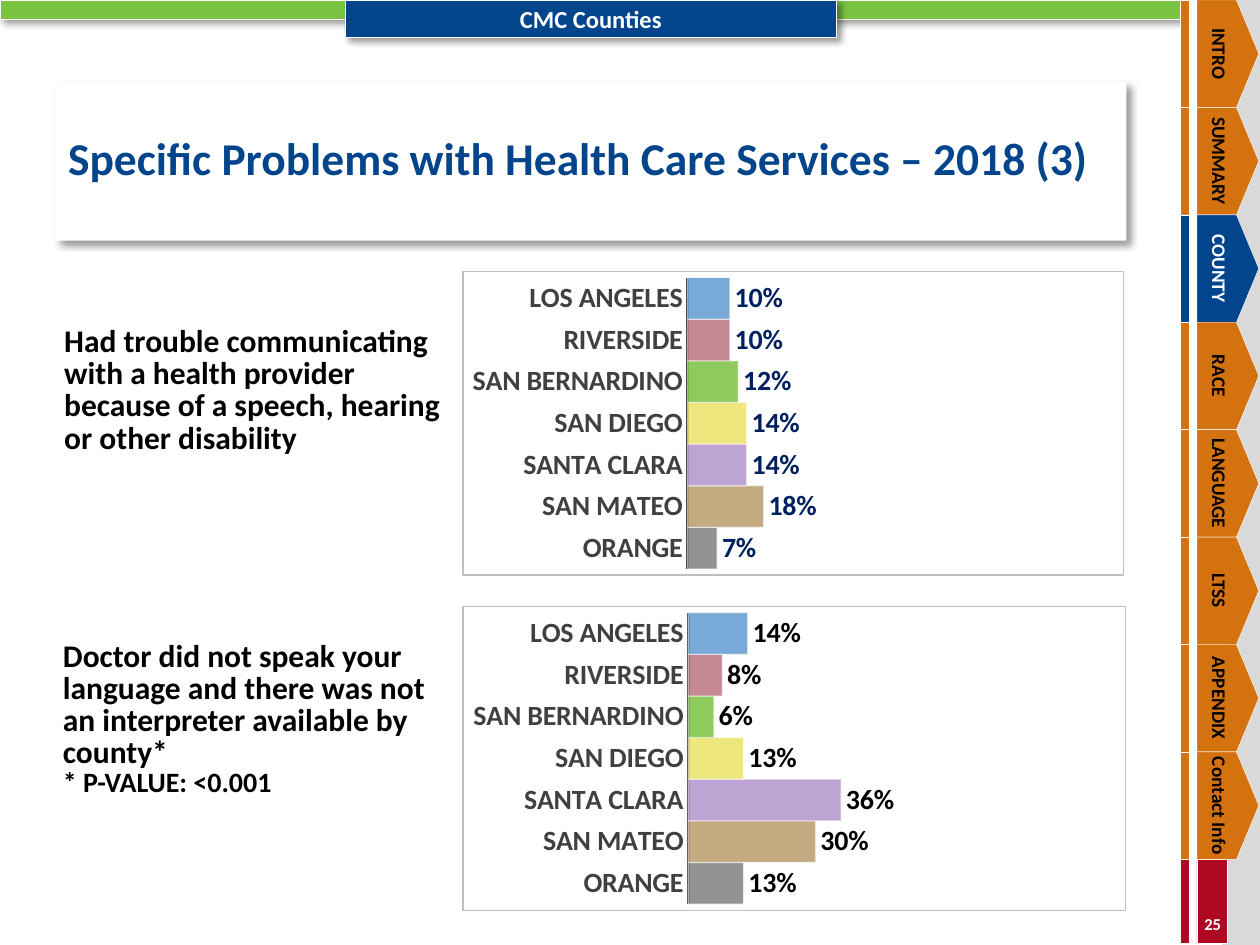
from lxml.etree import SubElement
from pptx import Presentation
from pptx.chart.data import CategoryChartData
from pptx.dml.color import RGBColor
from pptx.enum.chart import XL_CHART_TYPE, XL_LABEL_POSITION, XL_TICK_MARK
from pptx.enum.shapes import MSO_SHAPE
from pptx.enum.text import MSO_ANCHOR, PP_ALIGN
from pptx.oxml import parse_xml
from pptx.oxml.ns import nsdecls, qn
from pptx.util import Inches, Pt

FONT = "Calibri"
COLORS = {
    "white": "FFFFFF", "black": "000000", "blue": "02458C", "navy": "002060",
    "green": "7BC342", "orange": "D4720F", "red": "AE0823", "rail": "D9D9D9",
    "axis": "404040", "border": "BFBFBF",
}
TITLE = "Specific Problems with Health Care Services – 2018 (3)"
TABS = ["INTRO", "SUMMARY", "COUNTY", "RACE", "LANGUAGE", "LTSS", "APPENDIX", "Contact Info"]
CURRENT_TAB = "COUNTY"
TAB_HEIGHT = 6.82 / len(TABS)
CAPTIONS = [  # box, then (text, size) per paragraph
    ((0.51, 2.88, 2.99, 0.45),
     [("Had trouble communicating with a health provider because of a speech, "
       "hearing or other disability", 18)]),
    ((0.5, 5.45, 3, 0.53),
     [("Doctor did not speak your language and there was not an interpreter "
       "available by county*", 18),
      ("* P-VALUE: <0.001", 16)]),
]
COUNTIES = [  # listed bottom to top: name, bar colour
    ("ORANGE", "808080"), ("SAN MATEO", "BA9C6C"), ("SANTA CLARA", "B395CB"),
    ("SAN DIEGO", "ECE368"), ("SAN BERNARDINO", "7BC342"),
    ("RIVERSIDE", "BC7583"), ("LOS ANGELES", "629CD0"),
]
CHARTS = [  # box, values, label colour
    ((3.67, 2.15, 5.25, 2.42), [0.07, 0.18, 0.14, 0.14, 0.12, 0.10, 0.10], "navy"),
    ((3.67, 4.81, 5.27, 2.42), [0.13, 0.30, 0.36, 0.13, 0.06, 0.08, 0.14], "black"),
]
PLOT_AREA = {"x": 0.34, "y": 0.02, "w": 0.64, "h": 0.96}


def rgb(name):
    return RGBColor.from_string(COLORS.get(name, name))


def inches(box):
    return [Inches(length) for length in box]


def style_font(font, size, color):
    font.name, font.size, font.bold = FONT, Pt(size), True
    font.color.rgb = rgb(color)


def add_shadow(shape):
    shape._element.spPr.append(parse_xml(
        f'<a:effectLst {nsdecls("a")}><a:outerShdw blurRad="{Pt(4)}" dist="{Pt(3)}" '
        'dir="2700000" algn="tl" rotWithShape="0"><a:srgbClr val="000000">'
        '<a:alpha val="40000"/></a:srgbClr></a:outerShdw></a:effectLst>'))


def add_block(shapes, box, fill, line_width=0.25, kind=MSO_SHAPE.RECTANGLE, shadow=False):
    shape = shapes.add_shape(kind, *inches(box))
    shape.fill.solid()
    shape.fill.fore_color.rgb = rgb(fill)
    if line_width:
        shape.line.color.rgb = rgb("white")
        shape.line.width = Pt(line_width)
    else:
        shape.line.fill.background()
    if shadow:
        add_shadow(shape)
    else:
        shape.shadow.inherit = False
    return shape


def write(shape, lines, color, align=PP_ALIGN.LEFT, anchor=MSO_ANCHOR.MIDDLE, spacing=0.85):
    """Fill a shape with (text, size) paragraphs in one colour."""
    frame = shape.text_frame
    frame.word_wrap = True
    frame.vertical_anchor = anchor
    frame.text = "\n".join(text for text, _ in lines)
    for paragraph, (_, size) in zip(frame.paragraphs, lines):
        paragraph.alignment = align
        paragraph.line_spacing = spacing
        style_font(paragraph.runs[0].font, size, color)


def add_text(shapes, box, lines, color, **options):
    text_box = shapes.add_textbox(*inches(box))
    frame = text_box.text_frame
    frame.margin_left = frame.margin_right = frame.margin_top = frame.margin_bottom = 0
    write(text_box, lines, color, **options)
    return text_box


def set_alpha(color_format_parent, percent):
    for color in color_format_parent.iter(qn("a:srgbClr")):
        SubElement(color, qn("a:alpha")).set("val", str(percent * 1000))


def add_navigation(shapes):
    add_block(shapes, (9.7, 0, 0.3, 7.5), "rail", line_width=0)
    for left, width in ((9.5, 0.24), (9.37, 0.07)):
        add_block(shapes, (left, 6.82, width, 0.67), "red")
    add_text(shapes, (9.5, 7.25, 0.25, 0.16), [("25", 9.5)], "white",
             align=PP_ALIGN.CENTER, spacing=1)
    add_block(shapes, (0, 0, 9.37, 0.15), "green", shadow=True)
    for index, name in enumerate(TABS):
        top = index * TAB_HEIGHT
        current = name == CURRENT_TAB
        fill = "blue" if current else "orange"
        add_block(shapes, (9.37, top, 0.07, TAB_HEIGHT), fill)
        arrow = add_block(shapes, (9.5, top, 0.49, TAB_HEIGHT), fill, kind=MSO_SHAPE.PENTAGON)
        arrow.adjustments[0] = 0.36
        label = add_text(shapes, (9.59, top, 0.4, TAB_HEIGHT), [(name, 11)],
                         "white" if current else "black",
                         align=PP_ALIGN.CENTER, anchor=MSO_ANCHOR.BOTTOM)
        label.text_frame._txBody.bodyPr.set("vert", "vert")
    banner = add_block(shapes, (2.74, 0, 3.9, 0.3), "blue", line_width=0.75, shadow=True)
    write(banner, [("CMC Counties", 14)], "white", align=PP_ALIGN.CENTER, spacing=1)


def frame_chart(chart):
    """Outline the chart and fix the inner plot area."""
    chart._chartSpace.find(qn("c:chart")).addnext(parse_xml(
        f'<c:spPr {nsdecls("c", "a")}><a:noFill/><a:ln w="{Pt(0.75)}"><a:solidFill>'
        f'<a:srgbClr val="{COLORS["border"]}"/></a:solidFill></a:ln></c:spPr>'))
    plot_area = chart._chartSpace.find(".//" + qn("c:plotArea"))
    for old_layout in plot_area.findall(qn("c:layout")):
        plot_area.remove(old_layout)
    sides = "".join(f'<c:{side} val="{share}"/>' for side, share in PLOT_AREA.items())
    plot_area.insert(0, parse_xml(
        f'<c:layout {nsdecls("c")}><c:manualLayout><c:layoutTarget val="inner"/>'
        f'<c:xMode val="edge"/><c:yMode val="edge"/>{sides}</c:manualLayout></c:layout>'))


def add_county_chart(shapes, box, values, label_color):
    data = CategoryChartData(number_format="0%")
    data.categories = [name for name, _ in COUNTIES]
    data.add_series("Series 1", values)
    chart = shapes.add_chart(XL_CHART_TYPE.BAR_CLUSTERED, *inches(box), data).chart
    chart.has_legend = chart.has_title = False
    chart.font.name, chart.font.size = FONT, Pt(16)

    value_axis = chart.value_axis
    value_axis.minimum_scale, value_axis.maximum_scale = 0, 1
    value_axis.has_major_gridlines = value_axis.visible = False
    category_axis = chart.category_axis
    category_axis.major_tick_mark = XL_TICK_MARK.NONE
    category_axis.format.line.color.rgb = rgb("axis")
    category_axis.format.line.width = Pt(1.5)
    style_font(category_axis.tick_labels.font, 16, "axis")

    plot = chart.plots[0]
    plot.gap_width, plot.overlap = 0, 91
    plot.vary_by_categories = False
    series = plot.series[0]
    for index, (_, color) in enumerate(COUNTIES):
        point = series.points[index].format
        point.fill.solid()
        point.fill.fore_color.rgb = rgb(color)
        point.line.color.rgb = rgb("white")
        point.line.width = Pt(0.75)
    for properties in series._element.iter(qn("c:spPr")):
        set_alpha(properties.find(qn("a:solidFill")), 85)
        set_alpha(properties.find(qn("a:ln")), 50)

    labels = series.data_labels
    labels.show_value = True
    labels.position = XL_LABEL_POSITION.OUTSIDE_END
    labels.number_format, labels.number_format_is_linked = "0%", False
    style_font(labels.font, 16, label_color)
    frame_chart(chart)


def add_title(slide):
    title = slide.shapes.title
    title.left, title.top, title.width, title.height = inches((0.44, 0.65, 8.5, 1.26))
    title.fill.solid()
    title.fill.fore_color.rgb = rgb("white")
    add_shadow(title)
    write(title, [(TITLE, 26)], "blue")
    properties = title.text_frame.paragraphs[0]._p.get_or_add_pPr()
    properties.set("marL", str(Inches(0.51)))
    properties.set("indent", str(-Inches(0.51)))


def main():
    presentation = Presentation()
    presentation.slide_width, presentation.slide_height = Inches(10), Inches(7.5)
    slide = presentation.slides.add_slide(presentation.slide_layouts[5])
    add_navigation(slide.shapes)
    add_title(slide)
    for box, lines in CAPTIONS:
        add_text(slide.shapes, box, lines, "black")
    for box, values, label_color in CHARTS:
        add_county_chart(slide.shapes, box, values, label_color)
    presentation.save("out.pptx")


if __name__ == "__main__":
    main()
